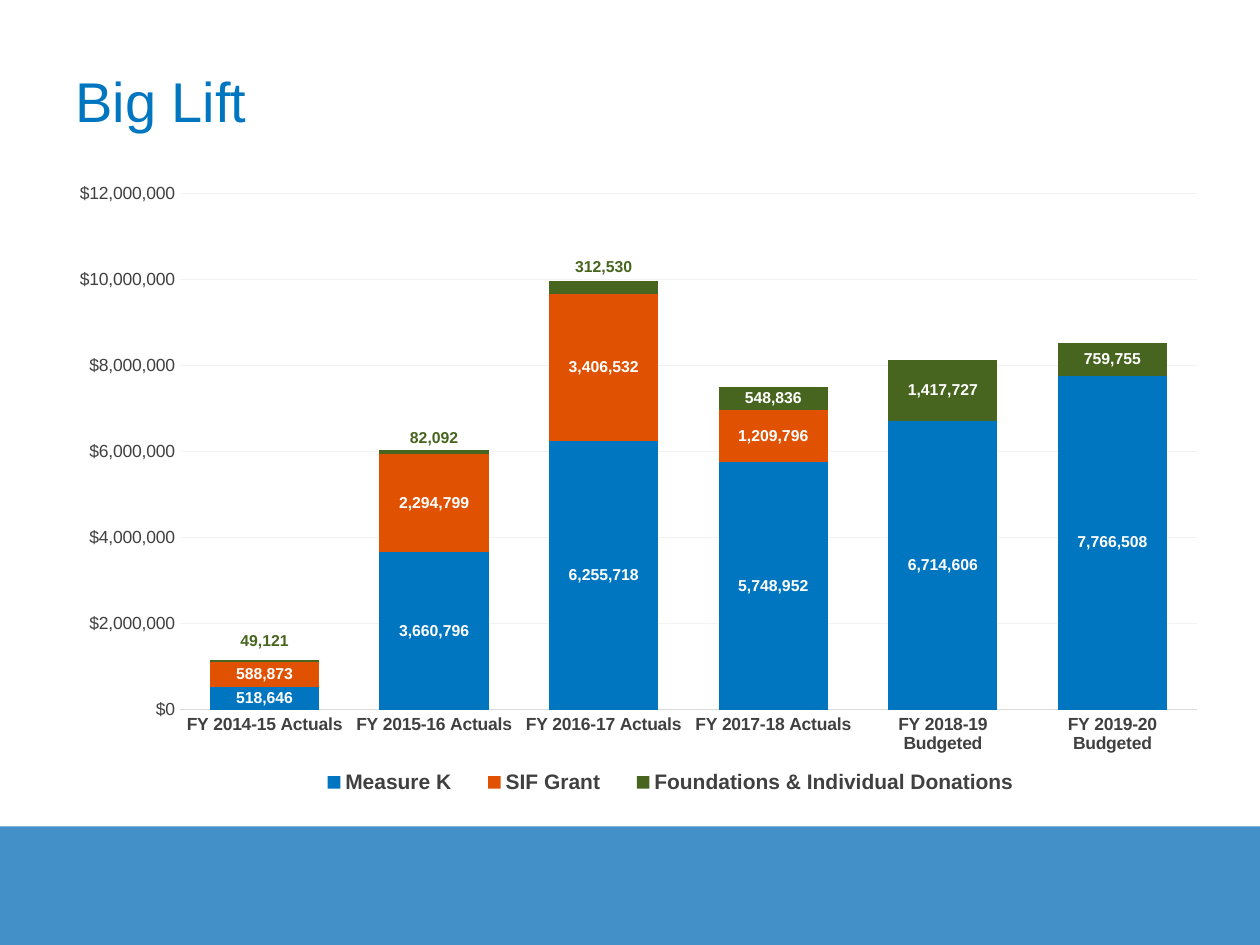
from lxml import etree
from pptx import Presentation
from pptx.chart.data import CategoryChartData
from pptx.dml.color import RGBColor
from pptx.enum.chart import XL_CHART_TYPE, XL_LABEL_POSITION, XL_LEGEND_POSITION, XL_TICK_MARK
from pptx.enum.shapes import MSO_SHAPE
from pptx.enum.text import MSO_ANCHOR
from pptx.oxml import parse_xml
from pptx.oxml.ns import nsdecls, qn
from pptx.util import Inches, Pt

STACKED = XL_CHART_TYPE.COLUMN_STACKED
CENTER = XL_LABEL_POSITION.CENTER
BOTTOM = XL_LEGEND_POSITION.BOTTOM
NO_TICK = XL_TICK_MARK.NONE
RECTANGLE = MSO_SHAPE.RECTANGLE
MIDDLE = MSO_ANCHOR.MIDDLE

BLUE = RGBColor(0x00, 0x76, 0xC0)
ORANGE = RGBColor(0xE0, 0x51, 0x02)
GREEN = RGBColor(0x47, 0x65, 0x1E)
BAND_BLUE = RGBColor(0x05, 0x6C, 0xB6)
WHITE = RGBColor(0xFF, 0xFF, 0xFF)
DARK_GRAY = RGBColor(0x40, 0x40, 0x40)
AXIS_GRAY = RGBColor(0xD9, 0xD9, 0xD9)
GRID_GRAY = RGBColor(0xF2, 0xF2, 0xF2)

YEARS = [
    "FY 2014-15 Actuals", "FY 2015-16 Actuals", "FY 2016-17 Actuals",
    "FY 2017-18 Actuals", "FY 2018-19 Budgeted", "FY 2019-20 Budgeted",
]
FUNDING = [
    ("Measure K", BLUE, [518646, 3660796, 6255718, 5748952, 6714606, 7766508]),
    ("SIF Grant", ORANGE, [588873, 2294799, 3406532, 1209796, 0, None]),
    ("Foundations & Individual Donations", GREEN,
     [49121, 82092, 312530, 548836, 1417727, 759755]),
]
RAISED_LABELS = {0: -0.03, 1: -0.02, 2: -0.03}
PLOT_BOX = {"x": 0.12, "y": 0.03, "w": 0.86, "h": 0.78}
LEGEND_BOX = {"x": 0.22, "y": 0.89, "w": 0.63, "h": 0.06}


def style_font(font, size, color, bold=False):
    font.name = "Arial"
    font.size = Pt(size)
    font.bold = bold
    font.color.rgb = color


def add_text(page, text, box, size, color, bold=False):
    frame = page.shapes.add_textbox(*map(Inches, box)).text_frame
    frame.word_wrap = True
    frame.vertical_anchor = MIDDLE
    span = frame.paragraphs[0].add_run()
    span.text = text
    style_font(span.font, size, color, bold)


def add_footer_band(page, box):
    band = page.shapes.add_shape(RECTANGLE, *map(Inches, box))
    band.shadow.inherit = False
    band.fill.solid()
    band.fill.fore_color.rgb = BAND_BLUE
    band.line.fill.background()
    color = band._element.spPr.find(".//" + qn("a:srgbClr"))
    etree.SubElement(color, qn("a:alpha")).set("val", "75000")


def manual_layout(**settings):
    parts = "".join(f'<c:{name} val="{value}"/>' for name, value in settings.items())
    return parse_xml(
        f'<c:layout {nsdecls("c")}><c:manualLayout>{parts}</c:manualLayout></c:layout>')


def place_part(element, position, **settings):
    for layout in element.findall(qn("c:layout")):
        element.remove(layout)
    element.insert(position, manual_layout(xMode="edge", yMode="edge", **settings))


def set_plot_area(chart):
    area = chart._chartSpace.chart.plotArea
    place_part(area, 0, **PLOT_BOX)
    target = parse_xml(f'<c:layoutTarget {nsdecls("c")} val="inner"/>')
    area.find(".//" + qn("c:manualLayout")).insert(0, target)


def add_legend(chart):
    chart.has_legend = True
    legend = chart.legend
    legend.position = BOTTOM
    legend.include_in_layout = False
    style_font(legend.font, 12, DARK_GRAY, bold=True)
    place_part(legend._element, 1, **LEGEND_BOX)


def style_axes(chart):
    years, dollars = chart.category_axis, chart.value_axis
    for axis in (years, dollars):
        axis.major_tick_mark = axis.minor_tick_mark = NO_TICK
        style_font(axis.tick_labels.font, 10, DARK_GRAY, bold=axis is years)
    years.format.line.color.rgb = AXIS_GRAY
    years.format.line.width = Pt(0.75)
    dollars.minimum_scale, dollars.maximum_scale = 0, 12000000
    dollars.major_unit = 2000000
    dollars.tick_labels.number_format = '"$"#,##0'
    dollars.tick_labels.number_format_is_linked = False
    dollars.format.line.fill.background()
    dollars.major_gridlines.format.line.color.rgb = GRID_GRAY
    dollars.major_gridlines.format.line.width = Pt(0.75)


def style_series(series, color):
    series.format.fill.solid()
    series.format.fill.fore_color.rgb = color
    labels = series.data_labels
    labels.show_value = True
    labels.position = CENTER
    labels.number_format = "#,##0"
    labels.number_format_is_linked = False
    style_font(labels.font, 9, WHITE, bold=True)


def raise_label(series, index, offset):
    label = series.points[index].data_label
    style_font(label.font, 9, GREEN, bold=True)
    label.position = CENTER
    element = series._element.xpath(f'.//c:dLbl[c:idx/@val="{index}"]')[0]
    element.insert(1, manual_layout(x=0, y=offset))


def hide_label(series, index):
    series.data_labels._element.insert(0, parse_xml(
        f'<c:dLbl {nsdecls("c")}><c:idx val="{index}"/><c:delete val="1"/></c:dLbl>'))


def add_funding_chart(page, box):
    data = CategoryChartData(number_format="#,##0")
    data.categories = YEARS
    for name, _, values in FUNDING:
        data.add_series(name, values)
    chart = page.shapes.add_chart(STACKED, *map(Inches, box), data).chart
    style_font(chart.font, 10, DARK_GRAY)
    chart.has_title = False
    add_legend(chart)
    set_plot_area(chart)
    style_axes(chart)
    plot = chart.plots[0]
    plot.gap_width, plot.overlap = 55, 100
    plot.vary_by_categories = False
    for series, (_, color, values) in zip(plot.series, FUNDING):
        style_series(series, color)
        if 0 in values:
            hide_label(series, values.index(0))
    donations = plot.series[2]
    for index, offset in RAISED_LABELS.items():
        raise_label(donations, index, offset)


def main():
    deck = Presentation()
    deck.slide_width, deck.slide_height = Inches(10), Inches(7.5)
    page = deck.slides.add_slide(deck.slide_layouts[6])
    add_footer_band(page, (0, 6.56, 10, 0.94))
    add_text(page, "Big Lift", (0.5, 0.3, 9, 0.99), size=32, color=BLUE)
    add_funding_chart(page, (0.3, 1.38, 9.39, 5.25))
    deck.save("out.pptx")


if __name__ == "__main__":
    main()
